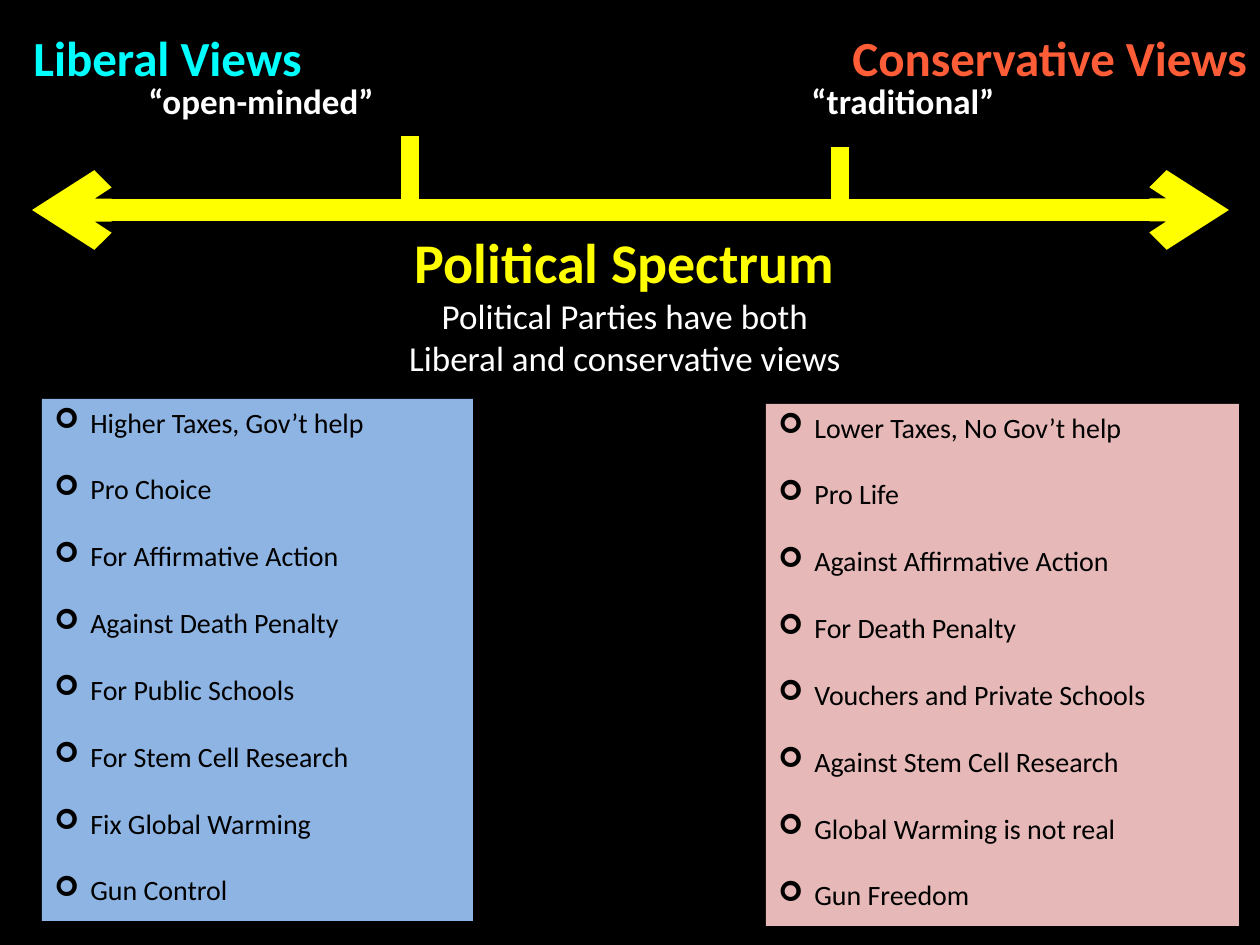
"""Build the political spectrum slide with its two lists of views."""
from lxml import etree
from pptx import Presentation
from pptx.dml.color import RGBColor
from pptx.enum.shapes import MSO_CONNECTOR, MSO_SHAPE
from pptx.enum.text import MSO_ANCHOR, PP_ALIGN
from pptx.oxml.ns import qn
from pptx.util import Emu, Pt

STRAIGHT = MSO_CONNECTOR.STRAIGHT
RECT = MSO_SHAPE.RECTANGLE
TOP = MSO_ANCHOR.TOP
LEFT, CENTER = PP_ALIGN.LEFT, PP_ALIGN.CENTER
PX = 914400 // 126
FONT = "Calibri"
C = {
    "black": "000000", "white": "FFFFFF", "yellow": "FFFF00", "cyan": "00FFFF",
    "orange": "FF5D37", "blue": "8EB4E3", "pink": "E6B9B8",
}

LABELS = [
    ("Liberal Views", (21, 21, 297, 72), 28, "cyan"),
    ("Conservative Views", (840, 21, 425, 72), 28, "orange"),
    ("“open-minded”", (136, 73, 253, 55), 20, "white"),
    ("“traditional”", (799, 73, 210, 55), 20, "white"),
]
TITLE = "Political Spectrum"
SUBTITLE = ["Political Parties have both", "Liberal and conservative views"]
TITLE_BOX = (378, 221, 494, 165)
LINES = [
    ((32, 210, 1229, 210), 13, True),
    ((410, 199, 410, 136), 10.25, False),
    ((840, 210, 840, 147), 10.25, False),
]
VIEWS = [
    ((42, 399, 431, 522), "blue", [
        "Higher Taxes, Gov’t help", "Pro Choice", "For Affirmative Action",
        "Against Death Penalty", "For Public Schools", "For Stem Cell Research",
        "Fix Global Warming", "Gun Control"]),
    ((766, 404, 473, 522), "pink", [
        "Lower Taxes, No Gov’t help", "Pro Life", "Against Affirmative Action",
        "For Death Penalty", "Vouchers and Private Schools",
        "Against Stem Cell Research", "Global Warming is not real", "Gun Freedom"]),
]
INDENT = 36


def px(values):
    return [Emu(v * PX) for v in values]


def rgb(name):
    return RGBColor.from_string(C[name])


def add_run(p, text, size, color, bold=False):
    r = p.add_run()
    r.text = text
    r.font.name, r.font.size, r.font.bold = FONT, Pt(size), bold
    r.font.color.rgb = rgb(color)


def add_text(slide, box, wrap):
    tf = slide.shapes.add_textbox(*px(box)).text_frame
    tf.word_wrap = wrap
    return tf


def add_line(slide, ends, width, arrows):
    s = slide.shapes.add_connector(STRAIGHT, *px(ends))
    s.line.color.rgb = rgb("yellow")
    s.line.width = Pt(width)
    if arrows:
        ln = s.line._get_or_add_ln()
        for tag in ("a:headEnd", "a:tailEnd"):
            etree.SubElement(ln, qn(tag), type="arrow")
    etree.SubElement(s._element.spPr, qn("a:effectLst"))


def add_bullet(p):
    pPr = p._p.get_or_add_pPr()
    pPr.set("marL", str(INDENT * PX))
    pPr.set("indent", str(-INDENT * PX))
    clr = etree.SubElement(pPr, qn("a:buClr"))
    etree.SubElement(clr, qn("a:srgbClr"), val=C["black"])
    etree.SubElement(pPr, qn("a:buFont"), typeface="Wingdings")
    etree.SubElement(pPr, qn("a:buChar"), char="➢")


def add_views(slide, box, fill, items):
    s = slide.shapes.add_shape(RECT, *px(box))
    s.shadow.inherit = False
    s.fill.solid()
    s.fill.fore_color.rgb = rgb(fill)
    s.line.fill.background()
    tf = s.text_frame
    tf.word_wrap = True
    tf.vertical_anchor = TOP
    for i, item in enumerate(items):
        p = tf.add_paragraph() if i else tf.paragraphs[0]
        p.alignment = LEFT
        if i:
            p.space_before = Pt(19)
        add_bullet(p)
        add_run(p, item, 16, "black")


def main():
    prs = Presentation()
    prs.slide_width, prs.slide_height = px((1260, 945))
    slide = prs.slides.add_slide(prs.slide_layouts[6])
    slide.background.fill.solid()
    slide.background.fill.fore_color.rgb = rgb("black")

    for ends, width, arrows in LINES:
        add_line(slide, ends, width, arrows)
    for text, box, size, color in LABELS:
        tf = add_text(slide, box, False)
        add_run(tf.paragraphs[0], text, size, color, True)

    tf = add_text(slide, TITLE_BOX, True)
    p = tf.paragraphs[0]
    p.alignment = CENTER
    add_run(p, TITLE, 32, "yellow", True)
    p = tf.add_paragraph()
    p.alignment = CENTER
    for i, text in enumerate(SUBTITLE):
        if i:
            p.add_line_break()
        add_run(p, text, 20, "white")

    for box, fill, items in VIEWS:
        add_views(slide, box, fill, items)
    prs.save("out.pptx")


if __name__ == "__main__":
    main()
